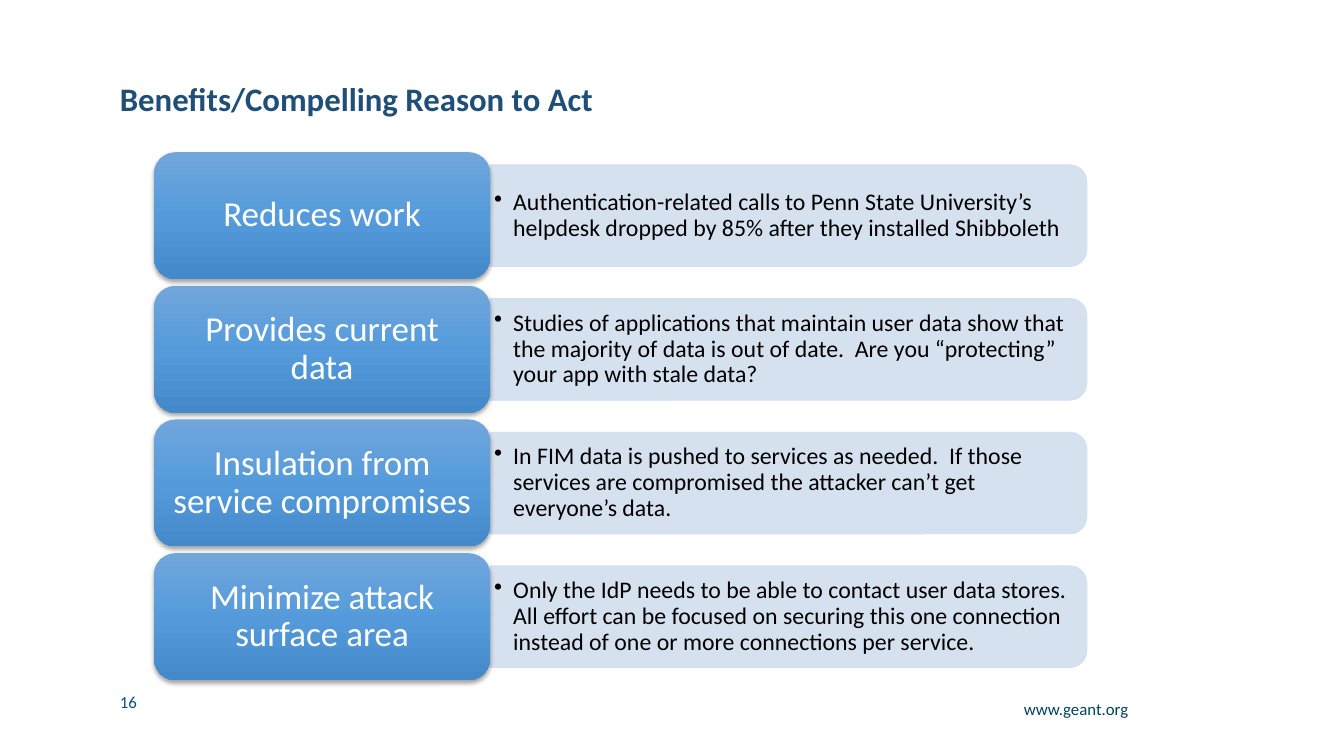
"""Build the slide on the benefits of federated identity management."""
from lxml import etree
from pptx import Presentation
from pptx.dml.color import RGBColor
from pptx.enum.shapes import MSO_SHAPE
from pptx.enum.text import MSO_ANCHOR, PP_ALIGN
from pptx.oxml import parse_xml
from pptx.oxml.ns import qn
from pptx.util import Inches, Pt

LEFT, CENTER, RIGHT = PP_ALIGN.LEFT, PP_ALIGN.CENTER, PP_ALIGN.RIGHT
TOP, MIDDLE = MSO_ANCHOR.TOP, MSO_ANCHOR.MIDDLE
TAB_SHAPE, PANEL_SHAPE = MSO_SHAPE.ROUNDED_RECTANGLE, MSO_SHAPE.ROUND_2_SAME_RECTANGLE
NAMESPACE = 'xmlns:a="http://schemas.openxmlformats.org/drawingml/2006/main"'
TAB_GRADIENT = f"""<a:gradFill {NAMESPACE} rotWithShape="1"><a:gsLst>
<a:gs pos="0"><a:srgbClr val="71A6DB"/></a:gs>
<a:gs pos="50000"><a:srgbClr val="559BDB"/></a:gs>
<a:gs pos="100000"><a:srgbClr val="448ACA"/></a:gs>
</a:gsLst><a:lin ang="5400000" scaled="0"/></a:gradFill>"""
TAB_SHADOW = f"""<a:outerShdw {NAMESPACE} blurRad="40000" dist="23000" dir="5400000"
rotWithShape="0"><a:srgbClr val="000000"><a:alpha val="35000"/></a:srgbClr></a:outerShdw>"""


def color(value):
    return RGBColor.from_string(value)


def write(shape, text, size, font_color, align=LEFT, anchor=TOP, spacing=0.9, bold=False):
    text_frame = shape.text_frame
    text_frame.word_wrap = True
    text_frame.vertical_anchor = anchor
    text_frame.text = text
    paragraph = text_frame.paragraphs[0]
    paragraph.alignment = align
    paragraph.line_spacing = spacing
    font = paragraph.runs[0].font
    font.name, font.size, font.bold = "Calibri", Pt(size), bold
    font.color.rgb = color(font_color)
    return paragraph


presentation = Presentation()
presentation.slide_width, presentation.slide_height = Inches(13.33), Inches(7.5)
slide = presentation.slides.add_slide(presentation.slide_layouts[6])

number = slide.shapes.add_textbox(Inches(1.09), Inches(6.81), Inches(1.45), Inches(0.3))
write(number, "16", 12, "065081", spacing=1.0)
website = slide.shapes.add_textbox(Inches(9.61), Inches(6.91), Inches(1.68), Inches(0.37))
write(website, "www.geant.org", 12, "03435F", align=RIGHT)
title = slide.shapes.add_textbox(Inches(1.09), Inches(0.77), Inches(10.82), Inches(0.47))
write(title, "Benefits/Compelling Reason to Act", 23.4, "1F4E79", anchor=MIDDLE, bold=True)

benefits = [
    ("Reduces work",
     "Authentication-related calls to Penn State University’s helpdesk dropped by 85% "
     "after they installed Shibboleth"),
    ("Provides current data",
     "Studies of applications that maintain user data show that the majority of data is "
     "out of date.  Are you “protecting” your app with stale data?"),
    ("Insulation from service compromises",
     "In FIM data is pushed to services as needed.  If those services are compromised "
     "the attacker can’t get everyone’s data."),
    ("Minimize attack surface area",
     "Only the IdP needs to be able to contact user data stores.  All effort can be "
     "focused on securing this one connection instead of one or more connections per service."),
]
tab_left, tab_top, tab_width, tab_height = 1.53, 1.51, 3.33, 1.26
panel_length, panel_height = 5.92, 1.01
row_pitch = 1.326
panel_left = tab_left + tab_width + (panel_length - panel_height) / 2

for row, (benefit, reason) in enumerate(benefits):
    top = tab_top + row * row_pitch
    panel_top = top + (tab_height - panel_length) / 2
    panel = slide.shapes.add_shape(PANEL_SHAPE, Inches(panel_left), Inches(panel_top),
                                   Inches(panel_height), Inches(panel_length))
    panel.rotation = 90
    panel.adjustments[0], panel.adjustments[1] = 0.167, 0
    panel.shadow.inherit = False
    panel.fill.solid()
    panel.fill.fore_color.rgb = color("D2DEEF")
    panel.line.color.rgb = color("D2DEEF")
    panel.line.width = Pt(0.5)
    for fill_color in panel.element.spPr.iter(qn("a:srgbClr")):
        etree.SubElement(fill_color, qn("a:alpha"), val="90000")
    panel_frame = panel.text_frame
    panel_frame.margin_left = panel_frame.margin_right = Inches(0.07)
    panel_frame.margin_top = panel_frame.margin_bottom = Inches(0.04)
    panel.element.txBody.bodyPr.set("vert", "vert270")
    paragraph = write(panel, reason, 17, "000000", anchor=MIDDLE)
    properties = paragraph._p.get_or_add_pPr()
    properties.set("marL", str(Inches(0.19)))
    properties.set("indent", str(-Inches(0.19)))
    etree.SubElement(properties, qn("a:buChar"), char="•")

    tab = slide.shapes.add_shape(TAB_SHAPE, Inches(tab_left), Inches(top),
                                 Inches(tab_width), Inches(tab_height))
    tab.adjustments[0] = 0.167
    tab.line.fill.background()
    tab.shadow.inherit = False
    tab_properties = tab.element.spPr
    tab_properties.find(qn("a:prstGeom")).addnext(parse_xml(TAB_GRADIENT))
    tab_properties.find(qn("a:effectLst")).append(parse_xml(TAB_SHADOW))
    write(tab, benefit, 25, "FFFFFF", align=CENTER, anchor=MIDDLE)

presentation.save("out.pptx")
